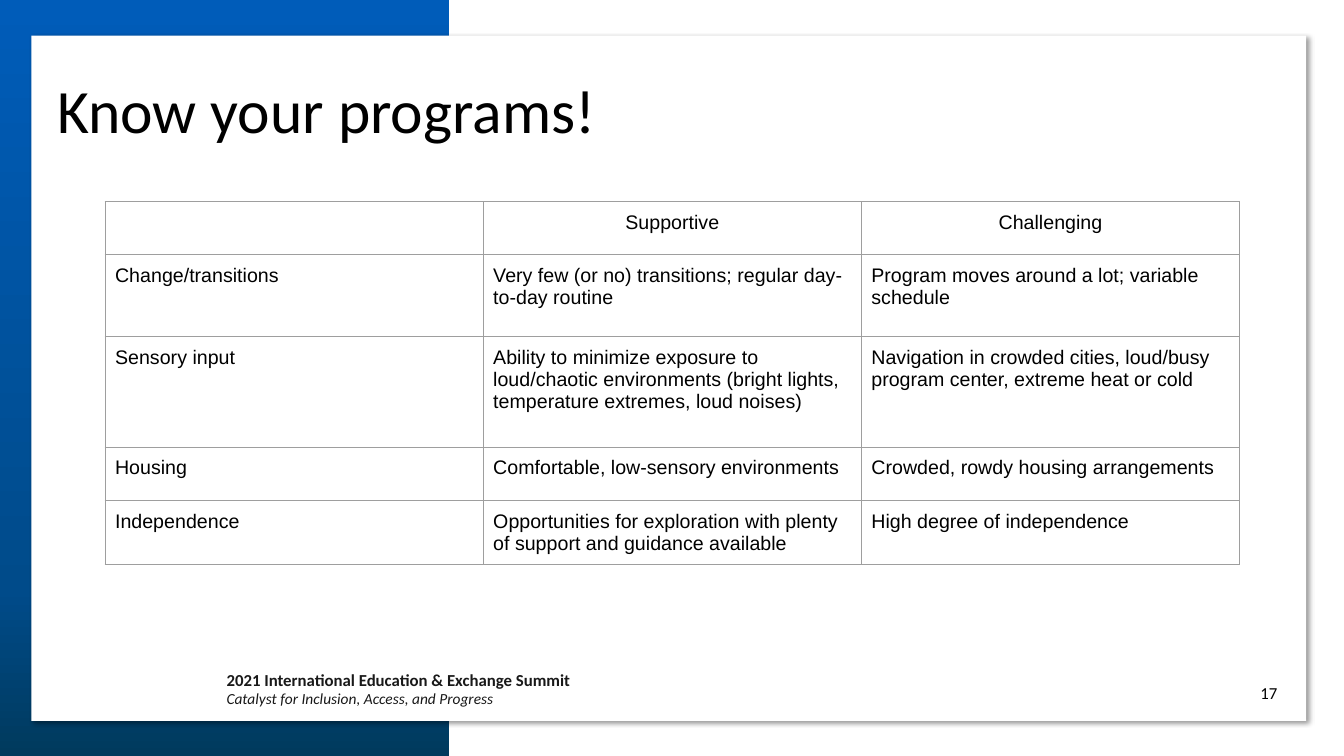
from copy import deepcopy

from pptx import Presentation
from pptx.dml.color import RGBColor
from pptx.enum.shapes import MSO_SHAPE
from pptx.enum.text import MSO_ANCHOR, PP_ALIGN as ALIGN
from pptx.oxml import parse_xml
from pptx.oxml.ns import nsdecls, qn
from pptx.util import Cm, Pt

ROWS = [
    ("", "Supportive", "Challenging"),
    ("Change/transitions",
     "Very few (or no) transitions; regular day-to-day routine",
     "Program moves around a lot; variable schedule"),
    ("Sensory input",
     "Ability to minimize exposure to loud/chaotic environments "
     "(bright lights, temperature extremes, loud noises)",
     "Navigation in crowded cities, loud/busy program center, extreme heat or cold"),
    ("Housing", "Comfortable, low-sensory environments",
     "Crowded, rowdy housing arrangements"),
    ("Independence",
     "Opportunities for exploration with plenty of support and guidance available",
     "High degree of independence"),
]
ROW_HEIGHTS = [1.34, 2.07, 2.78, 1.34, 1.34]
COL_WIDTH = 9.53


def rgb(color):
    return RGBColor.from_string(color)


class SlideBuilder:
    font = "Calibri"
    table_font = "Arial"
    ink = "000000"
    footer_ink = "191919"
    grid = "9E9E9E"
    gradient = [(0, "005CB9"), (0.78, "004B8A"), (1, "003A5D")]

    def __init__(self, prs):
        self.s = prs.slides.add_slide(prs.slide_layouts[5])

    def set_text(self, p, text, size, color=None, font=None, align=ALIGN.LEFT,
                 bold=False, italic=False):
        p.text = text
        p.alignment = align
        for r in p.runs:
            f = r.font
            f.name, f.size = font or self.font, Pt(size)
            f.bold, f.italic = bold, italic
            f.color.rgb = rgb(color or self.ink)

    def rect(self, x, y, w, h):
        sp = self.s.shapes.add_shape(MSO_SHAPE.RECTANGLE, Cm(x), Cm(y), Cm(w), Cm(h))
        sp.shadow.inherit = False
        sp.line.fill.background()
        return sp

    def gradient_band(self, x, y, w, h):
        fill = self.rect(x, y, w, h).fill
        fill.gradient()
        fill.gradient_angle = 270
        last = fill.gradient_stops[-1]._gs
        last.addnext(deepcopy(last))
        for stop, (position, color) in zip(fill.gradient_stops, self.gradient):
            stop.position = position
            stop.color.rgb = rgb(color)

    def shadowed_panel(self, x, y, w, h):
        sp = self.rect(x, y, w, h)
        sp.fill.solid()
        sp.fill.fore_color.rgb = rgb("FFFFFF")
        effects = sp._element.spPr.find(qn("a:effectLst"))
        effects.append(parse_xml(
            f'<a:outerShdw {nsdecls("a")} blurRad="{Pt(4)}" dist="{Pt(3)}" '
            'dir="2700000" algn="tl" rotWithShape="0"><a:srgbClr val="000000">'
            '<a:alpha val="40000"/></a:srgbClr></a:outerShdw>'))

    def title(self, text, x, y, w, h):
        sp = self.s.shapes.title
        self.s.shapes._spTree.append(sp._element)  # bring in front of the panel
        sp.left, sp.top, sp.width, sp.height = Cm(x), Cm(y), Cm(w), Cm(h)
        tf = sp.text_frame
        tf.vertical_anchor = MSO_ANCHOR.MIDDLE
        self.set_text(tf.paragraphs[0], text, 44)
        tf.paragraphs[0].line_spacing = 0.9

    def text_box(self, x, y, w, h, lines):
        """Add a text box; each line is a dict of arguments for set_text()."""
        tf = self.s.shapes.add_textbox(Cm(x), Cm(y), Cm(w), Cm(h)).text_frame
        tf.word_wrap = True
        for i, line in enumerate(lines):
            p = tf.add_paragraph() if i else tf.paragraphs[0]
            self.set_text(p, **line)

    def border(self, cell):
        tcPr = cell._tc.get_or_add_tcPr()
        for i, side in enumerate("LRTB"):
            tcPr.insert(i, parse_xml(
                f'<a:ln{side} {nsdecls("a")} w="{Pt(0.75)}"><a:solidFill>'
                f'<a:srgbClr val="{self.grid}"/></a:solidFill></a:ln{side}>'))

    def table(self, x, y, rows, heights, col_width):
        cols = len(rows[0])
        table = self.s.shapes.add_table(
            len(rows), cols, Cm(x), Cm(y),
            Cm(col_width * cols), Cm(sum(heights))).table
        table.first_row = table.horz_banding = False
        for col in table.columns:
            col.width = Cm(col_width)
        for i, (texts, height) in enumerate(zip(rows, heights)):
            table.rows[i].height = Cm(height)
            for j, text in enumerate(texts):
                cell = table.cell(i, j)
                cell.fill.background()
                cell.margin_left = cell.margin_right = Cm(0.25)
                cell.margin_top = cell.margin_bottom = Cm(0.25)
                self.border(cell)
                self.set_text(cell.text_frame.paragraphs[0], text, 14,
                              font=self.table_font,
                              align=ALIGN.LEFT if i else ALIGN.CENTER)


def main():
    prs = Presentation()
    prs.slide_width, prs.slide_height = Cm(33.87), Cm(19.05)
    b = SlideBuilder(prs)
    b.gradient_band(0, 0, 11.32, 19.05)
    b.shadowed_panel(0.79, 0.9, 32.13, 17.27)
    b.text_box(5.46, 16.74, 22.3, 1.24, [
        dict(text="2021 International Education & Exchange Summit",
             size=12, color=b.footer_ink, bold=True),
        dict(text="Catalyst for Inclusion, Access, and Progress",
             size=11, color=b.footer_ink, italic=True),
    ])
    b.text_box(29.54, 17.07, 2.9, 0.76, [dict(text="17", size=12, align=ALIGN.RIGHT)])
    b.title("Know your programs!", 1.19, 1.02, 31.24, 3.68)
    b.table(2.65, 5.08, ROWS, ROW_HEIGHTS, COL_WIDTH)
    prs.save("out.pptx")


if __name__ == "__main__":
    main()
